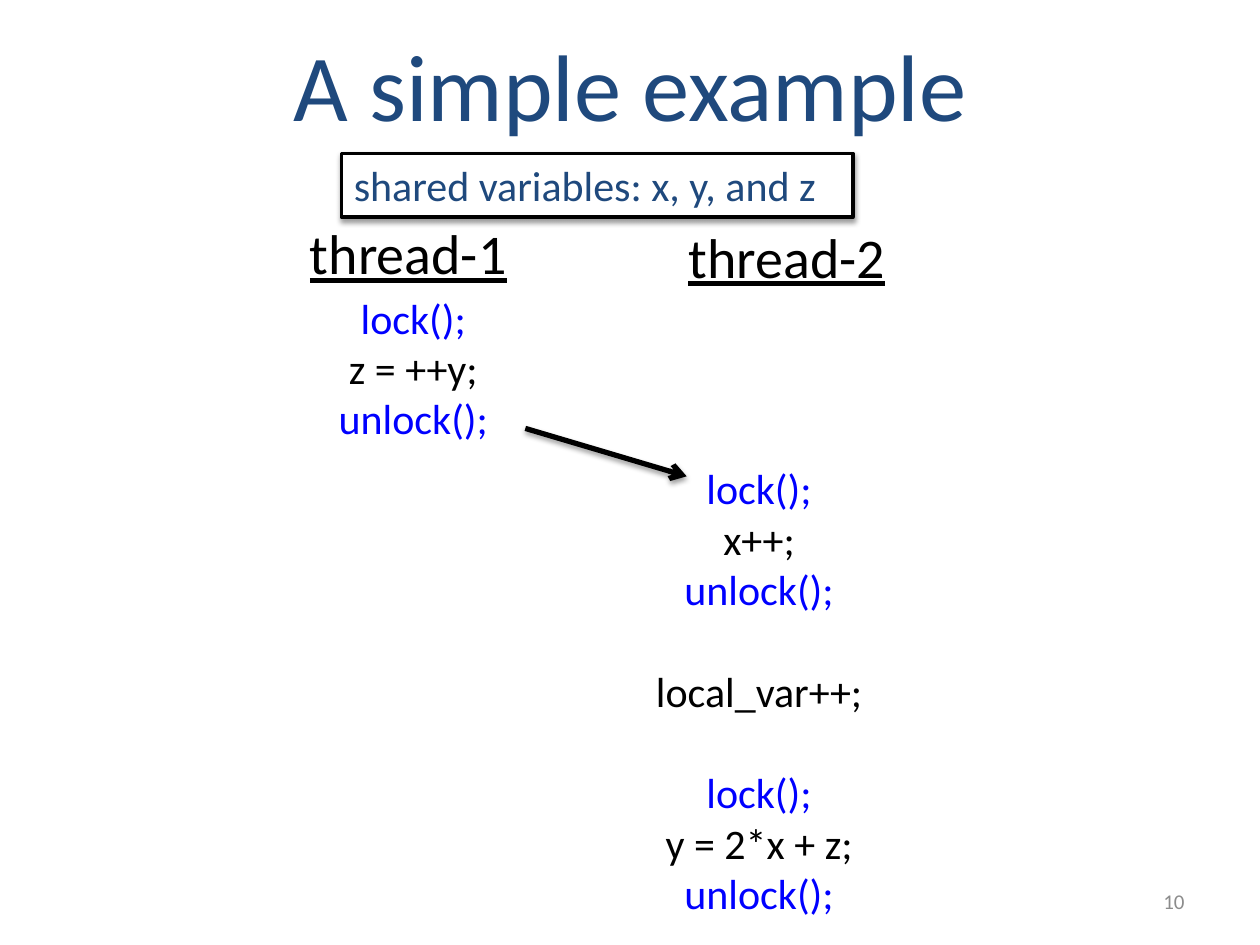
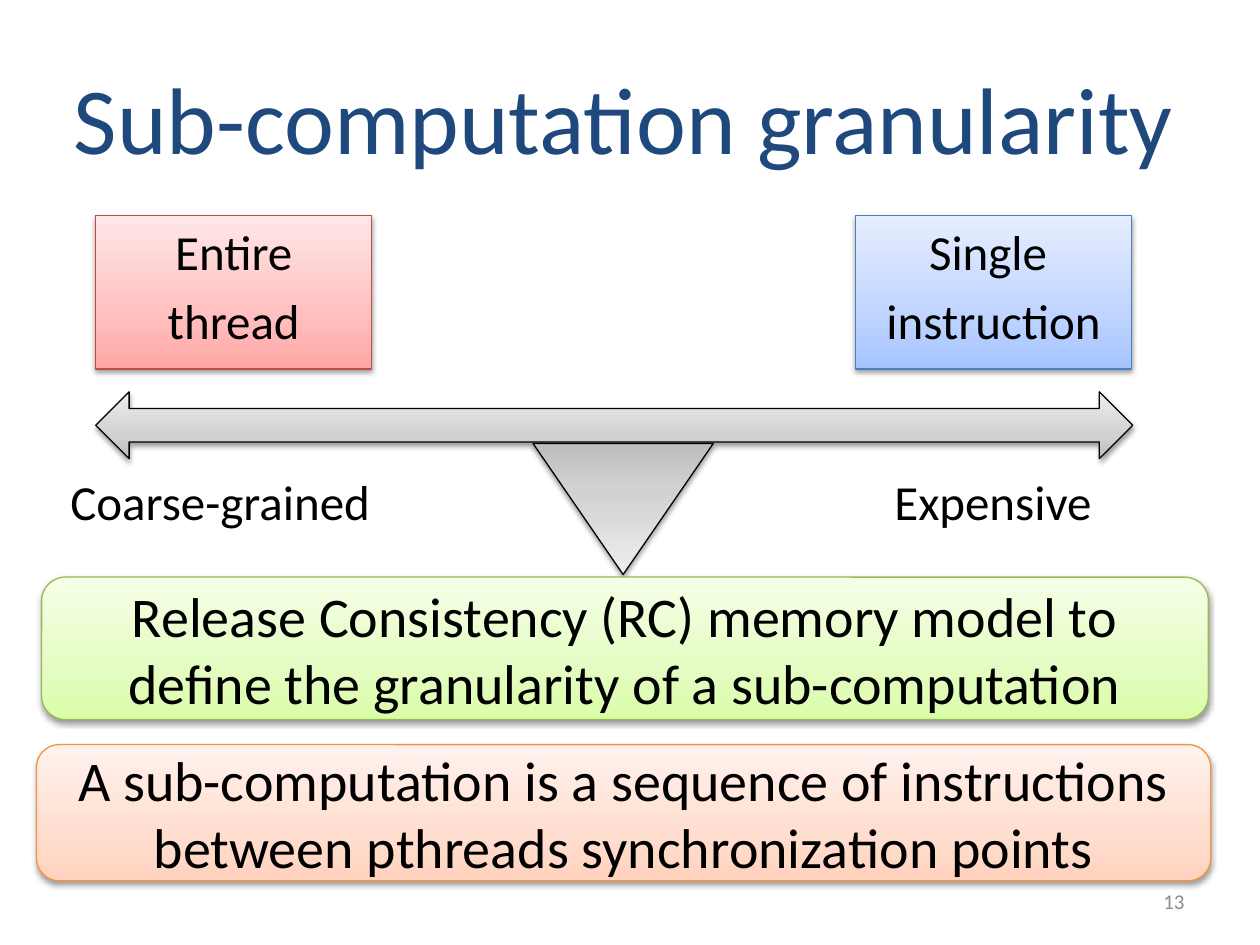
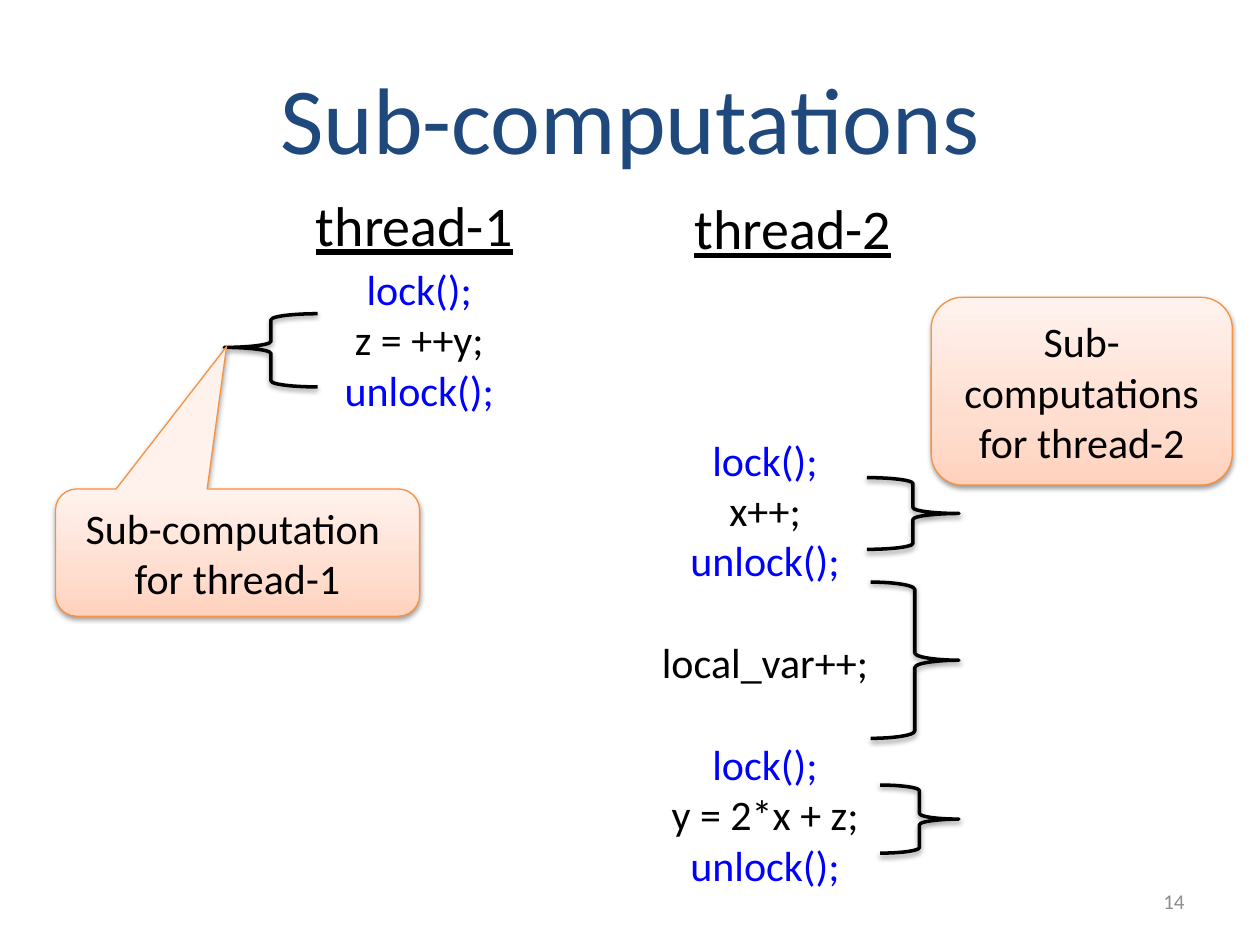
from copy import deepcopy

from lxml import etree
from pptx import Presentation
from pptx.dml.color import RGBColor
from pptx.enum.shapes import MSO_CONNECTOR, MSO_SHAPE
from pptx.enum.text import MSO_ANCHOR, PP_ALIGN
from pptx.oxml import parse_xml
from pptx.oxml.ns import nsdecls, qn
from pptx.util import Pt

FONT = "Calibri"
COLORS = {
    "title": "1F497D", "text": "000000", "lock": "0000FF",
    "number": "8C8C8C", "paper": "FFFFFF",
    "blue edge": "4B7EBC", "red edge": "BF4C48",
    "green edge": "98B955", "orange edge": "F69240",
}
GRADIENTS = {
    "blue": ("A4C4FF", "BFD4FF", "E6EEFF"),
    "red": ("FFA6A5", "FFC0BF", "FFE7E7"),
    "gray": ("BDBDBD", "D1D1D1", "EEEEEE"),
    "green": ("DAFDA7", "E4FCC2", "F5FFE7"),
    "orange": ("FFD2BD", "FFDED0", "FFF2ED"),
}
SHADOW = parse_xml(
    f'<a:outerShdw {nsdecls("a")} blurRad="39370" dist="20320" dir="5400000" rotWithShape="0">'
    '<a:srgbClr val="000000"><a:alpha val="38000"/></a:srgbClr></a:outerShdw>')


def write(shape, lines, size, color="text", align=PP_ALIGN.CENTER, anchor=MSO_ANCHOR.TOP, gap=0):
    """Write one paragraph per line, with lock calls in their own colour."""
    frame = shape.text_frame
    frame.word_wrap = True
    frame.vertical_anchor = anchor
    for index, line in enumerate(lines):
        paragraph = frame.add_paragraph() if index else frame.paragraphs[0]
        paragraph.alignment = align
        paragraph.space_before = Pt(gap if index else 0)
        run = paragraph.add_run()
        run.text = line
        run.font.name = FONT
        run.font.size = Pt(size)
        shade = "lock" if line.endswith("lock();") else color
        run.font.color.rgb = RGBColor.from_string(COLORS[shade])
    return frame


def add_block(slide, preset, box, edge="text", gradient=None, width=0.75):
    """Add a shadowed shape, filled with a vertical gradient if one is named."""
    block = slide.shapes.add_shape(preset, *map(Pt, box))
    block.line.color.rgb = RGBColor.from_string(COLORS[edge])
    block.line.width = Pt(width)
    properties = block._element.spPr
    if gradient:
        block.fill.gradient()
        block.fill.gradient_angle = 90
        stop_list = properties.find(f".//{qn('a:gsLst')}")
        stop_list.append(deepcopy(stop_list[0]))
        for stop, position, color in zip(block.fill.gradient_stops, (0, 0.35, 1), GRADIENTS[gradient]):
            stop.position = position
            stop.color.rgb = RGBColor.from_string(color)
    else:
        block.fill.background()
    block.shadow.inherit = False
    properties.find(qn("a:effectLst")).append(deepcopy(SHADOW))
    return block


deck = Presentation()
deck.slide_width, deck.slide_height = Pt(720), Pt(540)

# Titles and slide numbers
slides = []
for heading, number, left, top, width in (
        ("A simple example", "10", 36, 2.9, 648),
        ("Sub-computation granularity", "13", -10.8, 21.6, 734.4),
        ("Sub-computations", "14", 36, 21.6, 648)):
    slide = deck.slides.add_slide(deck.slide_layouts[5])
    title = slide.shapes.title
    title.left, title.top, title.width, title.height = Pt(left), Pt(top), Pt(width), Pt(90)
    write(title, [heading], 54, "title", anchor=MSO_ANCHOR.MIDDLE)
    page = slide.shapes.add_textbox(Pt(516), Pt(500.5), Pt(168), Pt(28.75))
    write(page, [number], 12, "number", PP_ALIGN.RIGHT, MSO_ANCHOR.MIDDLE)
    slides.append(slide)
example, granularity, computations = slides

# The two threads, on the first and last slides
THREAD_1 = ["lock();", "z = ++y;", "unlock();"]
THREAD_2 = ["lock();", "x++;", "unlock();", "local_var++;", "lock();", "y = 2*x + z;", "unlock();"]
for slide, dx, dy in ((example, 0, 0), (computations, 3.4, -16.3)):
    for name, left, top in (("thread-1", 154.5, 121.5), ("thread-2", 370.8, 123.4)):
        thread_name = slide.shapes.add_textbox(Pt(left + dx), Pt(top + dy), Pt(157.7), Pt(62))
        write(thread_name, [name], 32).paragraphs[0].runs[0].font.underline = True
    first_code = slide.shapes.add_textbox(Pt(167.8 + dx), Pt(163.4 + dy), Pt(136.8), Pt(94.5))
    write(first_code, THREAD_1, 24)
    second_code = slide.shapes.add_textbox(Pt(305.3 + dx), Pt(158.4 + dy), Pt(257), Pt(371))
    second_frame = write(second_code, THREAD_2, 24)
    second_frame.margin_top = Pt(106)
    for step in (3, 4):
        second_frame.paragraphs[step].space_before = Pt(29.3)

# A simple example
handover = example.shapes.add_connector(
    MSO_CONNECTOR.STRAIGHT, Pt(300.2), Pt(244.8), Pt(392.4), Pt(272.2))
handover.line.color.rgb = RGBColor.from_string(COLORS["text"])
handover.line.width = Pt(3)
handover_properties = handover._element.spPr
etree.SubElement(handover_properties.find(qn("a:ln")), qn("a:tailEnd"), type="arrow")
etree.SubElement(handover_properties, qn("a:effectLst")).append(deepcopy(SHADOW))

shared = add_block(example, MSO_SHAPE.RECTANGLE, (195.1, 87.8, 292.3, 36.3), width=2)
shared.shadow.inherit = False
shared.fill.solid()
shared.fill.fore_color.rgb = RGBColor.from_string(COLORS["paper"])
write(shared, ["shared variables: x, y, and z"], 24, "title", PP_ALIGN.LEFT).word_wrap = False

# Sub-computation granularity
for lines, left, color in ((["Single ", "instruction"], 488.9, "blue"),
                           (["Entire", "thread"], 54.7, "red")):
    extreme = add_block(granularity, MSO_SHAPE.RECTANGLE, (left, 123.1, 157.7, 87.8),
                        f"{color} edge", color)
    write(extreme, lines, 28, gap=5.6)
add_block(granularity, MSO_SHAPE.LEFT_RIGHT_ARROW, (54.7, 223.9, 592.6, 38.2), gradient="gray")
for drawback, left, width in (("Coarse-grained", 33.1, 211.7), ("Expensive", 504, 142.6)):
    label = granularity.shapes.add_textbox(Pt(left), Pt(265.7), Pt(width), Pt(41))
    write(label, [drawback], 28, align=PP_ALIGN.LEFT)
pivot = add_block(granularity, MSO_SHAPE.ISOSCELES_TRIANGLE, (304.6, 253.4, 103, 74.9), gradient="gray")
pivot.rotation = 180
for statement, box, color in (
        ("A sub-computation is a sequence of instructions between pthreads synchronization points",
         (20.9, 425.5, 671, 77.8), "orange"),
        ("Release Consistency (RC) memory model to define the granularity of a sub-computation",
         (23.8, 329.8, 666.7, 81.4), "green")):
    banner = add_block(granularity, MSO_SHAPE.ROUNDED_RECTANGLE, box, f"{color} edge", color)
    write(banner, [statement], 32, anchor=MSO_ANCHOR.MIDDLE)

# Sub-computations
for box in ((495.4, 272.9, 52.6, 41), (502.9, 448.6, 45, 38.9), (497.5, 332.6, 50.4, 89.3)):
    add_block(computations, MSO_SHAPE.LEFT_BRACE, box, width=2).rotation = 180
first_brace = add_block(computations, MSO_SHAPE.LEFT_BRACE, (128.2, 179.3, 53.3, 41.8), width=2)
first_brace.adjustments[1] = 0.46

first_note = add_block(computations, MSO_SHAPE.ROUNDED_RECTANGULAR_CALLOUT,
                       (31.7, 279.4, 208.1, 72.7), "orange edge", "orange")
first_note.adjustments[0], first_note.adjustments[1] = -0.03, -1.62
write(first_note, ["Sub-computation ", "for thread-1"], 24, anchor=MSO_ANCHOR.MIDDLE)
second_note = add_block(computations, MSO_SHAPE.ROUNDED_RECTANGLE,
                        (532.1, 169.9, 172.1, 107.3), "orange edge", "orange")
write(second_note, ["Sub-computations for thread-2"], 24, anchor=MSO_ANCHOR.MIDDLE)

deck.save("out.pptx")
